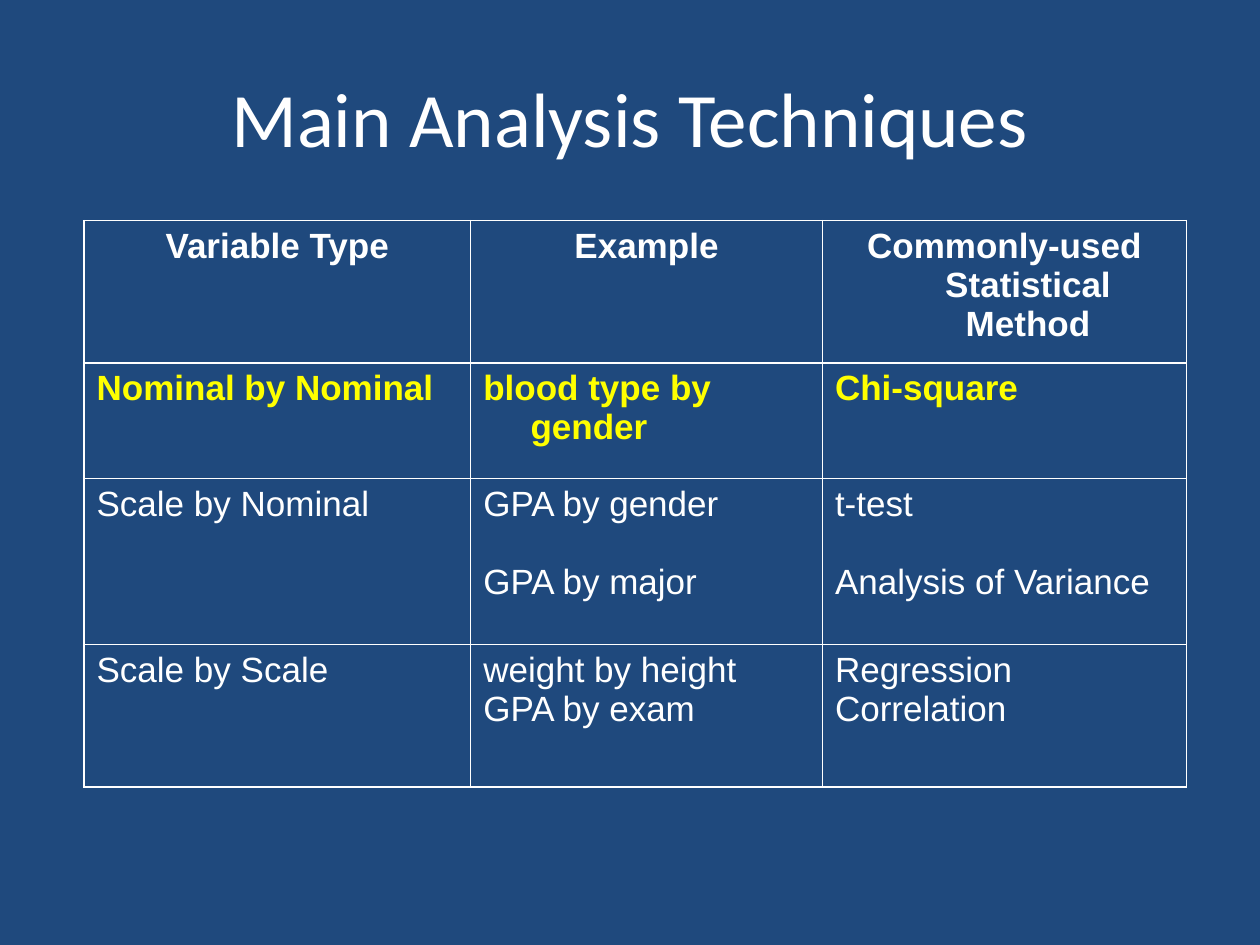
from dataclasses import dataclass

from lxml.etree import SubElement
from pptx import Presentation
from pptx.dml.color import RGBColor as RGB
from pptx.enum.text import MSO_ANCHOR as Anchor, PP_ALIGN as Align
from pptx.oxml.ns import qn
from pptx.slide import Slide
from pptx.table import _Cell as Cell
from pptx.util import Pt


@dataclass(frozen=True)
class Theme:
    back: str = "1F497D"
    text: str = "FFFFFF"
    mark: str = "FFFF00"
    head: str = "Calibri"
    body: str = "Arial"
    big: float = 44
    size: float = 20
    line: float = 1
    hang: float = 27
    gap: float = 22.3


@dataclass(frozen=True)
class Row:
    high: float
    cells: tuple[str, ...]
    color: str
    bold: bool = False
    align: Align = Align.LEFT
    gap: float = 0


LOOK = Theme()
COLS = (221, 201, 208)
ROWS = (
    Row(81.4, ("Variable Type", "Example", "Commonly-used Statistical Method"),
        LOOK.text, bold=True, align=Align.CENTER),
    Row(66, ("Nominal by Nominal", "blood type by gender", "Chi-square"),
        LOOK.mark, bold=True),
    Row(95, ("Scale by Nominal", "GPA by gender\nGPA by major",
             "t-test\nAnalysis of Variance"), LOOK.text, gap=LOOK.gap),
    Row(81.4, ("Scale by Scale", "weight by height\nGPA by exam",
               "Regression\nCorrelation"), LOOK.text),
)


def add_title(slide: Slide, text: str) -> None:
    frame = slide.shapes.add_textbox(Pt(36), Pt(21.6), Pt(648), Pt(90)).text_frame
    frame.word_wrap = True
    frame.vertical_anchor = Anchor.MIDDLE
    para = frame.paragraphs[0]
    para.text = text
    para.alignment = Align.CENTER
    para.font.name = LOOK.head
    para.font.size = Pt(LOOK.big)
    para.font.color.rgb = RGB.from_string(LOOK.text)


def add_edges(cell: Cell) -> None:
    """Rule all four sides, then clear the fill, which must follow the lines."""
    props = cell._tc.get_or_add_tcPr()
    for side in ("lnL", "lnR", "lnT", "lnB"):
        edge = SubElement(props, qn(f"a:{side}"), w=str(Pt(LOOK.line)))
        fill = SubElement(edge, qn("a:solidFill"))
        SubElement(fill, qn("a:srgbClr"), val=LOOK.text)
    cell.fill.background()


def fill_cell(cell: Cell, text: str, row: Row) -> None:
    frame = cell.text_frame
    frame.text = text
    for i, para in enumerate(frame.paragraphs):
        para.alignment = row.align
        para.space_before = Pt(row.gap if i else 0)
        props = para._p.get_or_add_pPr()
        props.set("marL", str(Pt(LOOK.hang)))
        props.set("indent", str(-Pt(LOOK.hang)))
        font = para.font
        font.name = LOOK.body
        font.size = Pt(LOOK.size)
        font.bold = row.bold
        font.color.rgb = RGB.from_string(row.color)
    add_edges(cell)


def add_grid(slide: Slide) -> None:
    high = sum(row.high for row in ROWS)
    grid = slide.shapes.add_table(len(ROWS), len(COLS), Pt(48), Pt(126),
                                  Pt(sum(COLS)), Pt(high)).table
    grid.first_row = grid.horz_banding = False
    for col, wide in zip(grid.columns, COLS):
        col.width = Pt(wide)
    for line, row in zip(grid.rows, ROWS):
        line.height = Pt(row.high)
        for cell, text in zip(line.cells, row.cells):
            fill_cell(cell, text, row)


def main() -> None:
    deck = Presentation()
    deck.slide_width, deck.slide_height = Pt(720), Pt(540)
    slide = deck.slides.add_slide(deck.slide_layouts[6])
    back = slide.background.fill
    back.solid()
    back.fore_color.rgb = RGB.from_string(LOOK.back)
    add_grid(slide)
    add_title(slide, "Main Analysis Techniques")
    deck.save("out.pptx")


if __name__ == "__main__":
    main()
